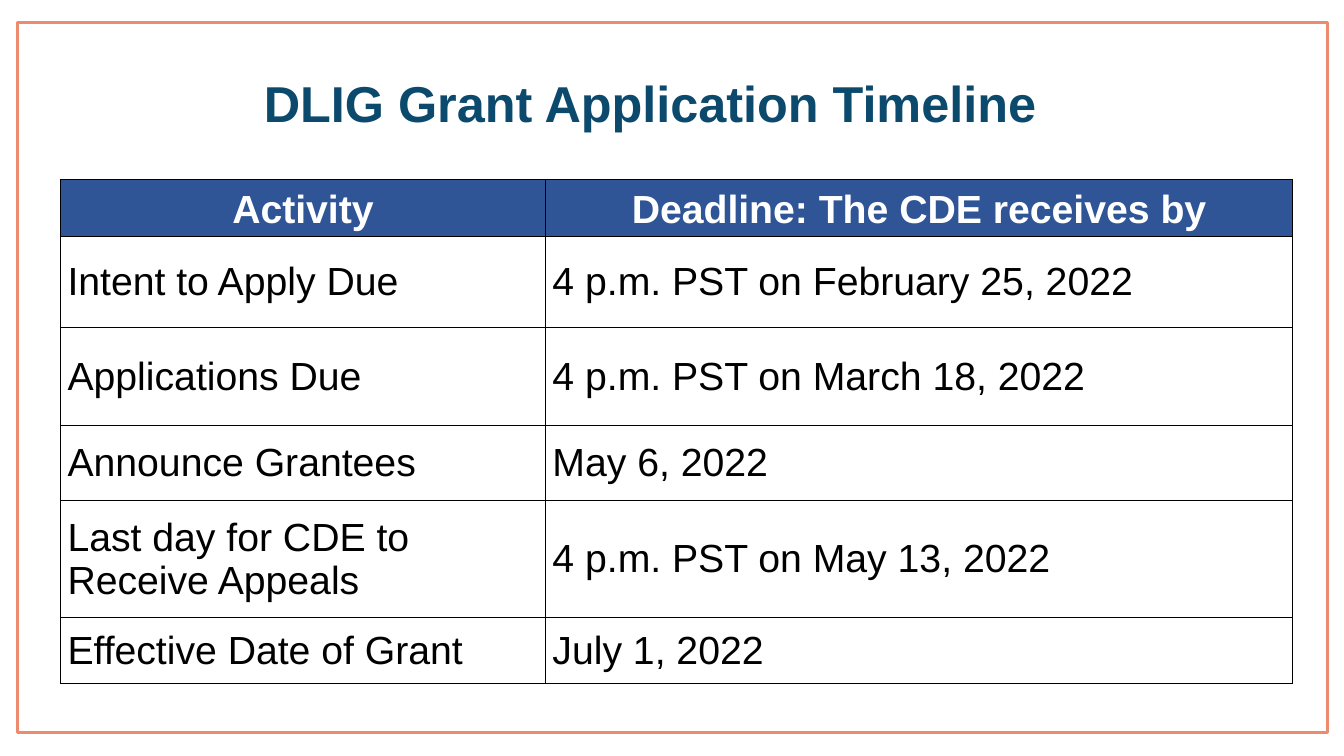
from lxml.etree import SubElement
from pptx import Presentation
from pptx.dml.color import RGBColor
from pptx.enum.shapes import MSO_SHAPE as Shape
from pptx.enum.text import MSO_ANCHOR as Anchor, PP_ALIGN as Align
from pptx.oxml.ns import qn
from pptx.util import Inches, Pt

CORAL = RGBColor(0xED, 0x8B, 0x6F)
TEAL = RGBColor(0x0C, 0x4A, 0x6D)
BLUE = RGBColor(0x2F, 0x55, 0x97)
WHITE = RGBColor(0xFF, 0xFF, 0xFF)
BLACK = RGBColor(0x00, 0x00, 0x00)

COLUMN_WIDTHS = [4.81, 7.41]
ROW_HEIGHTS = [0.57, 0.9, 0.97, 0.75, 1.16, 0.65]
TIMELINE = [
    ("Activity", "Deadline: The CDE receives by"),
    ("Intent to Apply Due", "4 p.m. PST on February 25, 2022"),
    ("Applications Due", "4 p.m. PST on March 18, 2022"),
    ("Announce Grantees", "May 6, 2022"),
    ("Last day for CDE to Receive Appeals", "4 p.m. PST on May 13, 2022"),
    ("Effective Date of Grant", "July 1, 2022"),
]


def write(frame, text, size=28, color=BLACK, bold=False, align=Align.LEFT,
          line_spacing=1.0, space_after=0):
    frame.word_wrap = True
    para = frame.paragraphs[0]
    para.alignment = align
    para.line_spacing = line_spacing
    para.space_after = Pt(space_after)
    span = para.add_run()
    span.text = text
    span.font.name = "Arial"
    span.font.size = Pt(size)
    span.font.bold = bold
    span.font.color.rgb = color


def add_borders(cell, color, width):
    properties = cell._tc.get_or_add_tcPr()
    for side in ("a:lnL", "a:lnR", "a:lnT", "a:lnB"):
        line = SubElement(properties, qn(side), w=str(Pt(width)))
        fill = SubElement(line, qn("a:solidFill"))
        SubElement(fill, qn("a:srgbClr"), val=str(color))


deck = Presentation()
deck.slide_width, deck.slide_height = Inches(13.33), Inches(7.5)
page = deck.slides.add_slide(deck.slide_layouts[6])

border = page.shapes.add_shape(
    Shape.RECTANGLE, Inches(0.17), Inches(0.22), Inches(13), Inches(7.05))
border.shadow.inherit = False
border.fill.background()
border.line.color.rgb = CORAL
border.line.width = Pt(2)

title = page.shapes.add_textbox(
    Inches(1.05), Inches(0.33), Inches(10.8), Inches(1.45))
title.text_frame.vertical_anchor = Anchor.MIDDLE
write(title.text_frame, "DLIG Grant Application Timeline", size=36, color=TEAL,
      bold=True, align=Align.CENTER, line_spacing=0.9)

table = page.shapes.add_table(
    len(TIMELINE), len(COLUMN_WIDTHS), Inches(0.6), Inches(1.78),
    Inches(sum(COLUMN_WIDTHS)), Inches(sum(ROW_HEIGHTS))).table
table.horz_banding = False
for column, width in zip(table.columns, COLUMN_WIDTHS):
    column.width = Inches(width)

header_format = dict(color=WHITE, bold=True, align=Align.CENTER, line_spacing=1.07)
body_format = dict(space_after=12)
for index, (row, height, texts) in enumerate(zip(table.rows, ROW_HEIGHTS, TIMELINE)):
    row.height = Inches(height)
    is_header = index == 0
    for cell, text in zip(row.cells, texts):
        cell.vertical_anchor = Anchor.MIDDLE
        cell.margin_left = cell.margin_right = Inches(0.07)
        cell.margin_top = cell.margin_bottom = 0
        add_borders(cell, BLACK, 1)
        if is_header:
            cell.fill.solid()
            cell.fill.fore_color.rgb = BLUE
        else:
            cell.fill.background()
        write(cell.text_frame, text, **(header_format if is_header else body_format))

deck.save("out.pptx")
